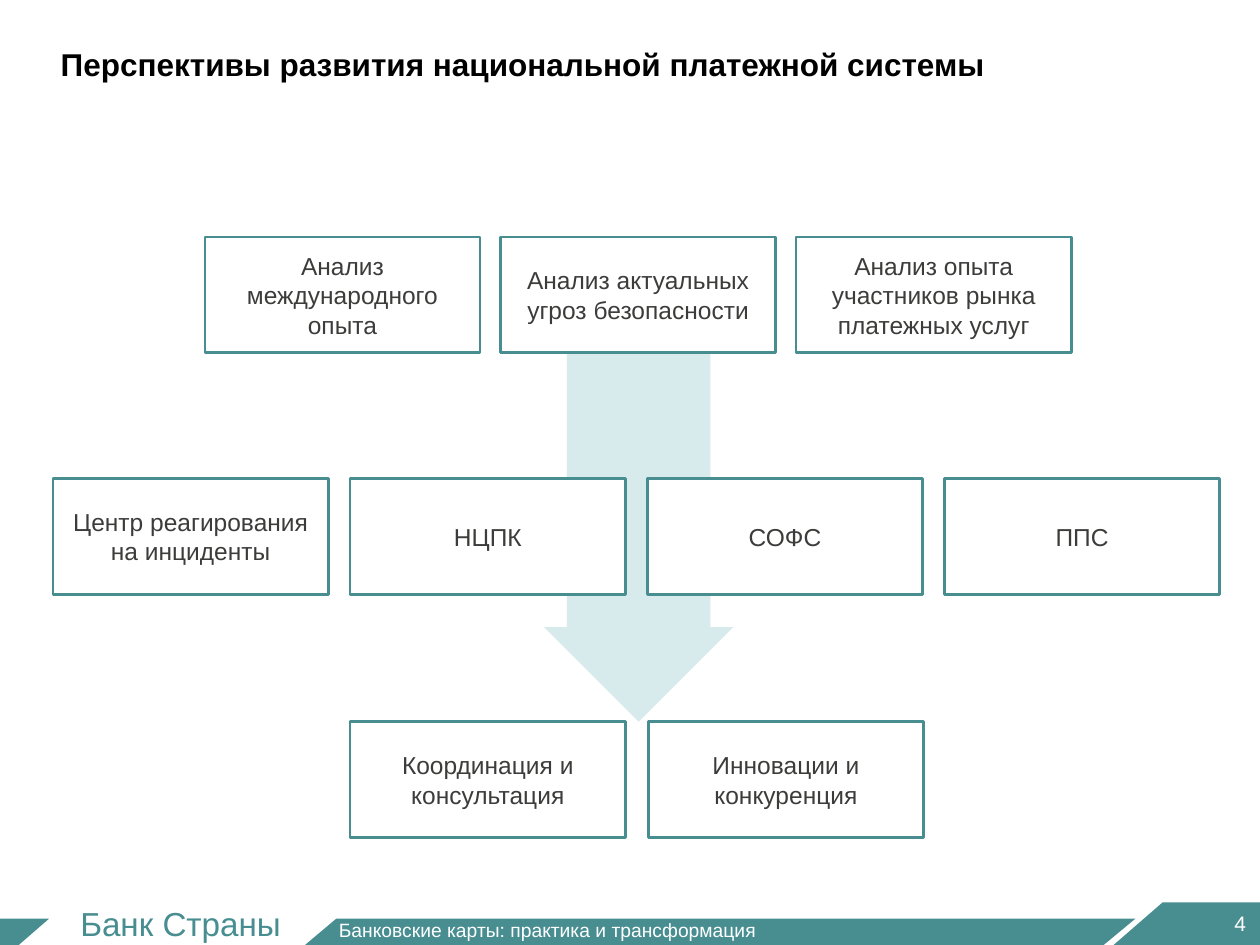
from lxml.etree import SubElement
from pptx import Presentation
from pptx.dml.color import RGBColor
from pptx.enum.shapes import MSO_SHAPE
from pptx.enum.text import MSO_ANCHOR, PP_ALIGN
from pptx.oxml.ns import qn
from pptx.util import Cm, Pt

TEAL, PALE, WHITE, GREY, BLACK = "488E91", "D8EBEC", "FFFFFF", "3C3C3B", "000000"
TITLE = "Перспективы развития национальной платежной системы"
WIDE, HIGH = 5.55, 2.33
ROWS = [
    (4.13, 4.78, 0.41, [
        ("Анализ международного опыта", False),
        ("Анализ актуальных угроз безопасности", True),
        ("Анализ опыта участников рынка платежных услуг", False)]),
    (1.07, 9.65, 0.44, [
        ("Центр реагирования на инциденты", False),
        ("НЦПК", True),
        ("СОФС", True),
        ("ППС", False)]),
    (7.06, 14.55, 0.46, [
        ("Координация и консультация", False),
        ("Инновации и конкуренция", False)]),
]
BANDS = [
    [(6.78, 18.52), (6.15, 19.05), (22.25, 19.05), (22.89, 18.52)],
    [(23.44, 18.19), (25.4, 18.19), (25.4, 19.05), (22.45, 19.05)],
    [(0, 18.52), (0.99, 18.52), (0.38, 19.05), (0, 19.05)],
]
LABELS = [
    ("Банк Страны", (1.62, 18.21, 4.2, 0.81), 19, TEAL, PP_ALIGN.LEFT, MSO_ANCHOR.TOP),
    ("4", (23.06, 18.31, 2.06, 0.58), 12, WHITE, PP_ALIGN.RIGHT, MSO_ANCHOR.MIDDLE),
    ("Банковские карты: практика и трансформация",
     (6.83, 18.52, 15.27, 0.53), 11, WHITE, PP_ALIGN.LEFT, MSO_ANCHOR.TOP),
]


def tint(item, code):
    item.solid()
    item.fore_color.rgb = RGBColor.from_string(code)


def write(shape, text, size, code, align, anchor, bold=False):
    frame = shape.text_frame
    frame.word_wrap = True
    frame.vertical_anchor = anchor
    frame.text = text
    para = frame.paragraphs[0]
    para.alignment = align
    para.space_before = Pt(0)
    font = para.font
    font.name, font.size, font.bold = "Arial", Pt(size), bold
    tint(font.fill, code)
    return frame


def paint(shape, code):
    shape.shadow.inherit = False
    tint(shape.fill, code)
    shape.line.fill.background()


def add_box(shapes, left, top, text, solid):
    box = shapes.add_shape(MSO_SHAPE.ROUNDED_RECTANGLE,
                           Cm(left), Cm(top), Cm(WIDE), Cm(HIGH))
    box.adjustments[0] = 0
    paint(box, WHITE)
    if not solid:
        color = box.fill._xPr.find(qn("a:solidFill"))[0]
        SubElement(color, qn("a:alpha"), val="20000")
    tint(box.line.fill, TEAL)
    box.line.width = Pt(1.5)
    write(box, text, 14, GREY, PP_ALIGN.CENTER, MSO_ANCHOR.MIDDLE)


def main():
    """Build the slide on the payment system's prospects."""
    deck = Presentation()
    deck.slide_width, deck.slide_height = Cm(25.4), Cm(19.05)
    slide = deck.slides.add_slide(deck.slide_layouts[5])
    shapes = slide.shapes

    for band in BANDS:
        dots = [(Cm(x), Cm(y)) for x, y in band]
        pen = shapes.build_freeform(*dots[0])
        pen.add_line_segments(dots[1:])
        paint(pen.convert_to_shape(), TEAL)

    arrow = shapes.add_shape(MSO_SHAPE.DOWN_ARROW, Cm(10.97), Cm(6.48), Cm(3.81), Cm(8.07))
    arrow.adjustments[0], arrow.adjustments[1] = 0.76, 0.5
    paint(arrow, PALE)

    title = shapes.title
    title.left, title.top, title.width, title.height = map(Cm, (0.97, 0.79, 21.95, 1.02))
    write(title, TITLE, 18, BLACK, PP_ALIGN.LEFT, MSO_ANCHOR.TOP, True)

    for left, top, gap, items in ROWS:
        for col, (text, solid) in enumerate(items):
            add_box(shapes, left + col * (WIDE + gap), top, text, solid)

    for text, area, *style in LABELS:
        frame = write(shapes.add_textbox(*map(Cm, area)), text, *style)
        frame.margin_left = frame.margin_right = 0
        frame.margin_top = frame.margin_bottom = 0

    deck.save("out.pptx")


if __name__ == "__main__":
    main()
